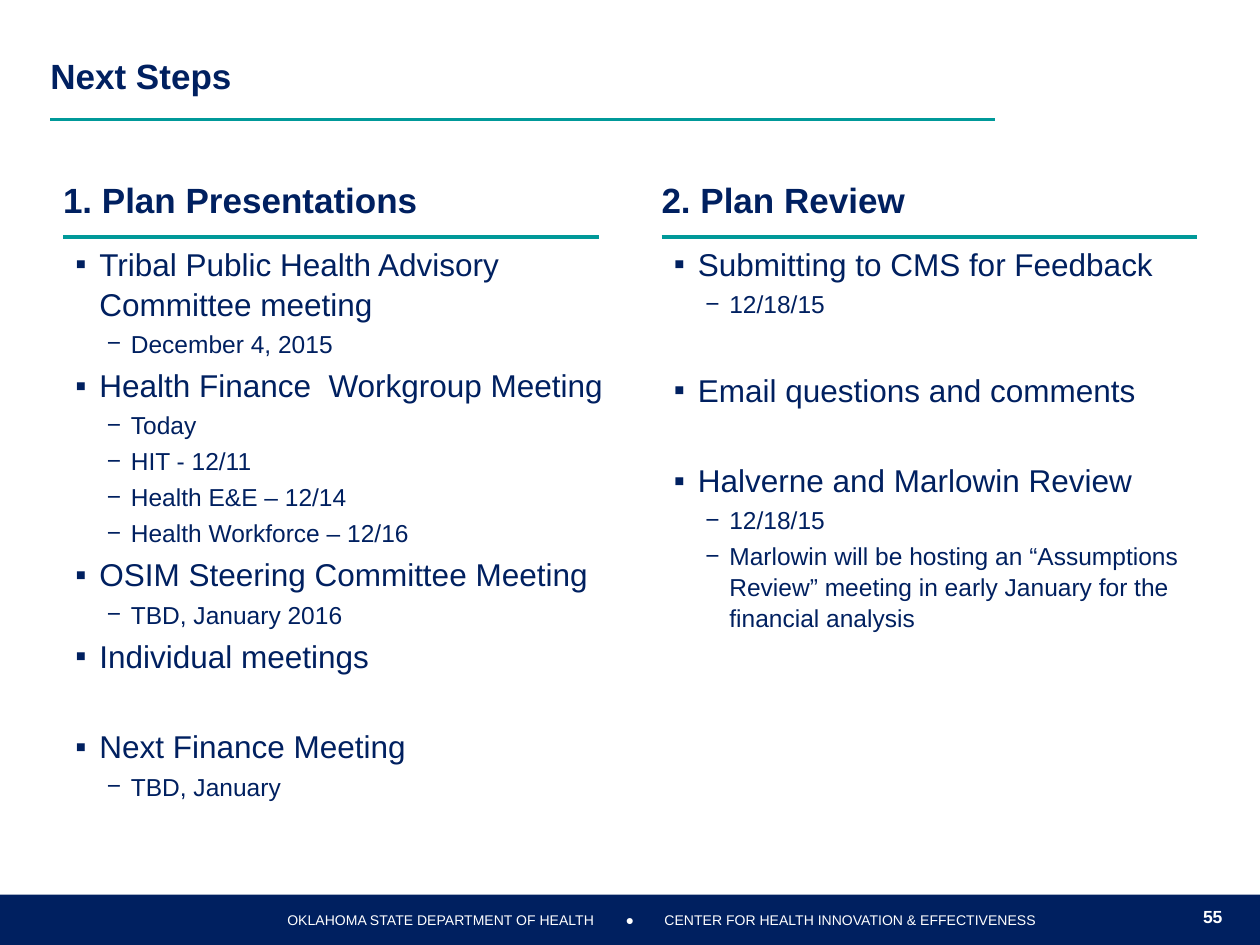
from lxml import etree
from pptx import Presentation
from pptx.dml.color import RGBColor
from pptx.enum import shapes, text
from pptx.oxml.ns import qn
from pptx.util import Inches, Pt

NAVY = RGBColor(0x00, 0x20, 0x60)
TEAL = RGBColor(0x00, 0x99, 0x99)
WHITE = RGBColor(0xFF, 0xFF, 0xFF)

# Per list level: size, left margin, bullet
LEVELS = [(18, 0.19, "▪"), (14, 0.44, "−")]
HANG = 0.19
LINE_SPACING = 1.05
GAP = 25.3  # extra points between separated groups

# Each column: left, text width, heading, items of (level, text, gap before)
COLUMNS = [
    (0.5, 4.58, "1. Plan Presentations", [
        (0, "Tribal Public Health Advisory Committee meeting", 0),
        (1, "December 4, 2015", 0),
        (0, "Health Finance  Workgroup Meeting", 0),
        (1, "Today", 0),
        (1, "HIT - 12/11", 0),
        (1, "Health E&E – 12/14", 0),
        (1, "Health Workforce – 12/16", 0),
        (0, "OSIM Steering Committee Meeting", 0),
        (1, "TBD, January 2016", 0),
        (0, "Individual meetings", 0),
        (0, "Next Finance Meeting", GAP),
        (1, "TBD, January", 0),
    ]),
    (5.25, 4.25, "2. Plan Review", [
        (0, "Submitting to CMS for Feedback", 0),
        (1, "12/18/15", 0),
        (0, "Email questions and comments", GAP),
        (0, "Halverne and Marlowin Review", GAP),
        (1, "12/18/15", 0),
        (1, "Marlowin will be hosting an “Assumptions Review” meeting in early "
            "January for the financial analysis", 0),
    ]),
]


def add_rule(x1, x2, y):
    line = s.shapes.add_connector(shapes.MSO_CONNECTOR.STRAIGHT,
                                  Inches(x1), Inches(y), Inches(x2), Inches(y))
    line.line.color.rgb = TEAL
    line.line.width = Pt(2)
    etree.SubElement(line._element.spPr, qn("a:effectLst"))


def put_text(sp, box, words, size, color, bold=False, align=text.PP_ALIGN.LEFT,
             insets=(0, 0.05, 0, 0.05), wrap=False):
    sp.left, sp.top, sp.width, sp.height = [Inches(v) for v in box]
    tf = sp.text_frame
    tf.word_wrap = wrap
    tf.auto_size = text.MSO_AUTO_SIZE.NONE
    tf.vertical_anchor = text.MSO_ANCHOR.MIDDLE
    tf.margin_left, tf.margin_top, tf.margin_right, tf.margin_bottom = [
        Inches(v) for v in insets]
    p = tf.paragraphs[0]
    p.alignment = align
    r = p.add_run()
    r.text = words
    r.font.name, r.font.size, r.font.bold = "Arial", Pt(size), bold
    r.font.color.rgb = color


prs = Presentation()
prs.slide_width, prs.slide_height = Inches(10), Inches(7.5)
s = prs.slides.add_slide(prs.slide_layouts[5])

# Title
put_text(s.shapes.title, (0.4, 0.25, 9.2, 0.7), "Next Steps", 20, NAVY, True, wrap=True)
add_rule(0.4, 7.9, 0.95)

# Footer band and its labels
band = s.shapes.add_shape(shapes.MSO_SHAPE.RECTANGLE,
                          Inches(0), Inches(7.1), Inches(10), Inches(0.4))
band.shadow.inherit = False
band.fill.solid()
band.fill.fore_color.rgb = NAVY
band.line.fill.background()
for box, words, size, bold in [
    ((2, 7.1, 3, 0.4), "OKLAHOMA STATE DEPARTMENT OF HEALTH", 8, False),
    ((4.75, 7.1, 0.5, 0.4), "●", 8, False),
    ((5.25, 7.1, 3, 0.4), "CENTER FOR HEALTH INNOVATION & EFFECTIVENESS", 8, False),
    ((9.5, 7.15, 0.25, 0.25), "55", 10, True),
]:
    put_text(s.shapes.add_textbox(0, 0, 0, 0), box, words, size, WHITE, bold,
             text.PP_ALIGN.CENTER, (0, 0, 0, 0))

# Two columns: heading, rule, bulleted list
for left, width, heading, items in COLUMNS:
    put_text(s.shapes.add_textbox(0, 0, 0, 0), (left, 1.33, 4.25, 0.55),
             heading, 20, NAVY, True, insets=(0, 0, 0, 0.05))
    add_rule(left, left + 4.25, 1.88)

    tf = s.shapes.add_textbox(Inches(left), Inches(1.88),
                              Inches(width), Inches(4.37)).text_frame
    tf.word_wrap = True
    for i, (level, words, gap) in enumerate(items):
        size, margin, bullet = LEVELS[level]
        p = tf.add_paragraph() if i else tf.paragraphs[0]
        p.level = level
        p.line_spacing = LINE_SPACING
        p.space_before = Pt(0.2 * size + gap if i else 0)
        pPr = p._p.get_or_add_pPr()
        pPr.set("marL", str(Inches(margin)))
        pPr.set("indent", str(-Inches(HANG)))
        bu_color = etree.SubElement(pPr, qn("a:buClr"))
        etree.SubElement(bu_color, qn("a:srgbClr"), val=str(NAVY))
        etree.SubElement(pPr, qn("a:buFont"), typeface="Arial")
        etree.SubElement(pPr, qn("a:buChar"), char=bullet)
        r = p.add_run()
        r.text = words
        r.font.name, r.font.size = "Arial", Pt(size)
        r.font.color.rgb = NAVY

prs.save("out.pptx")
